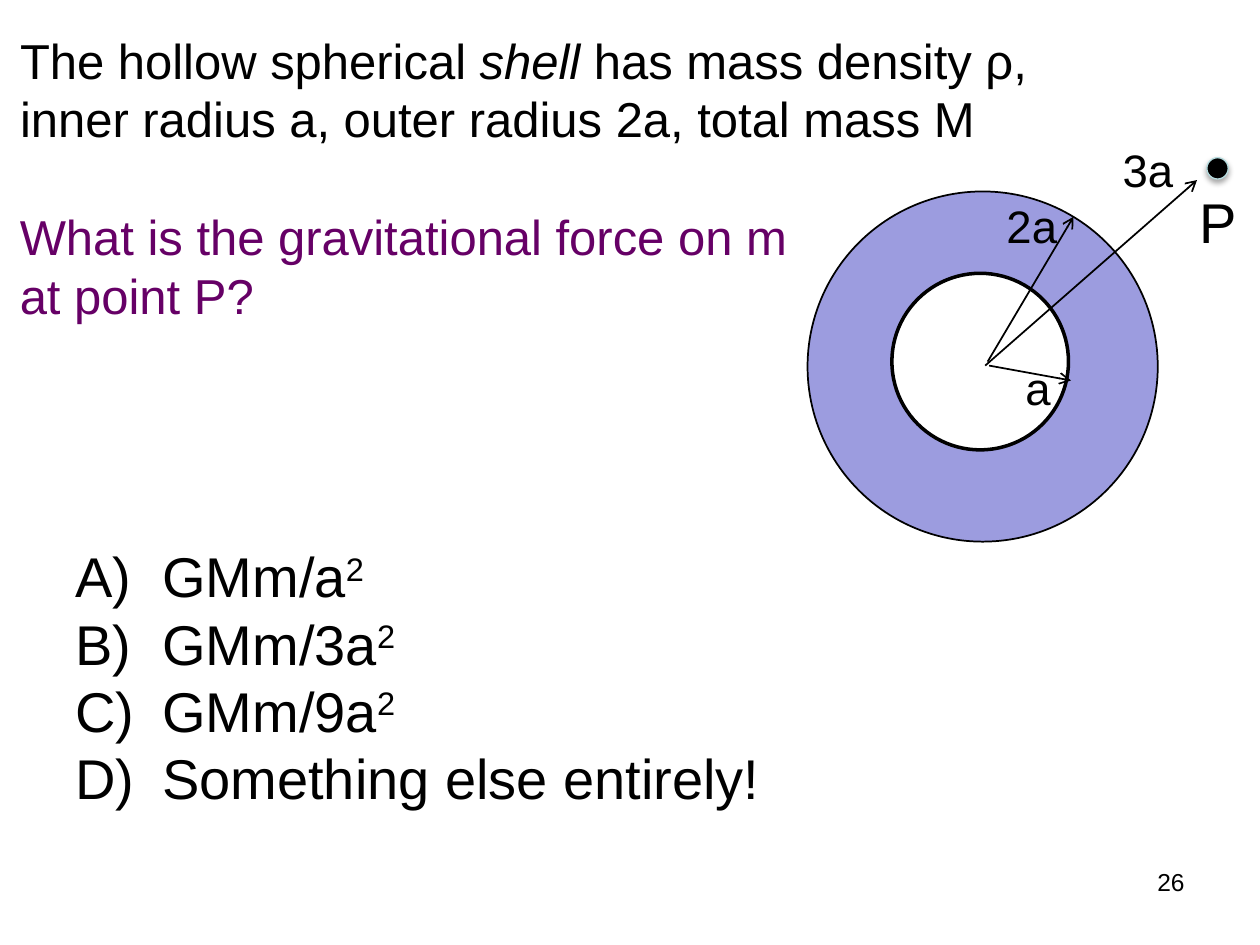
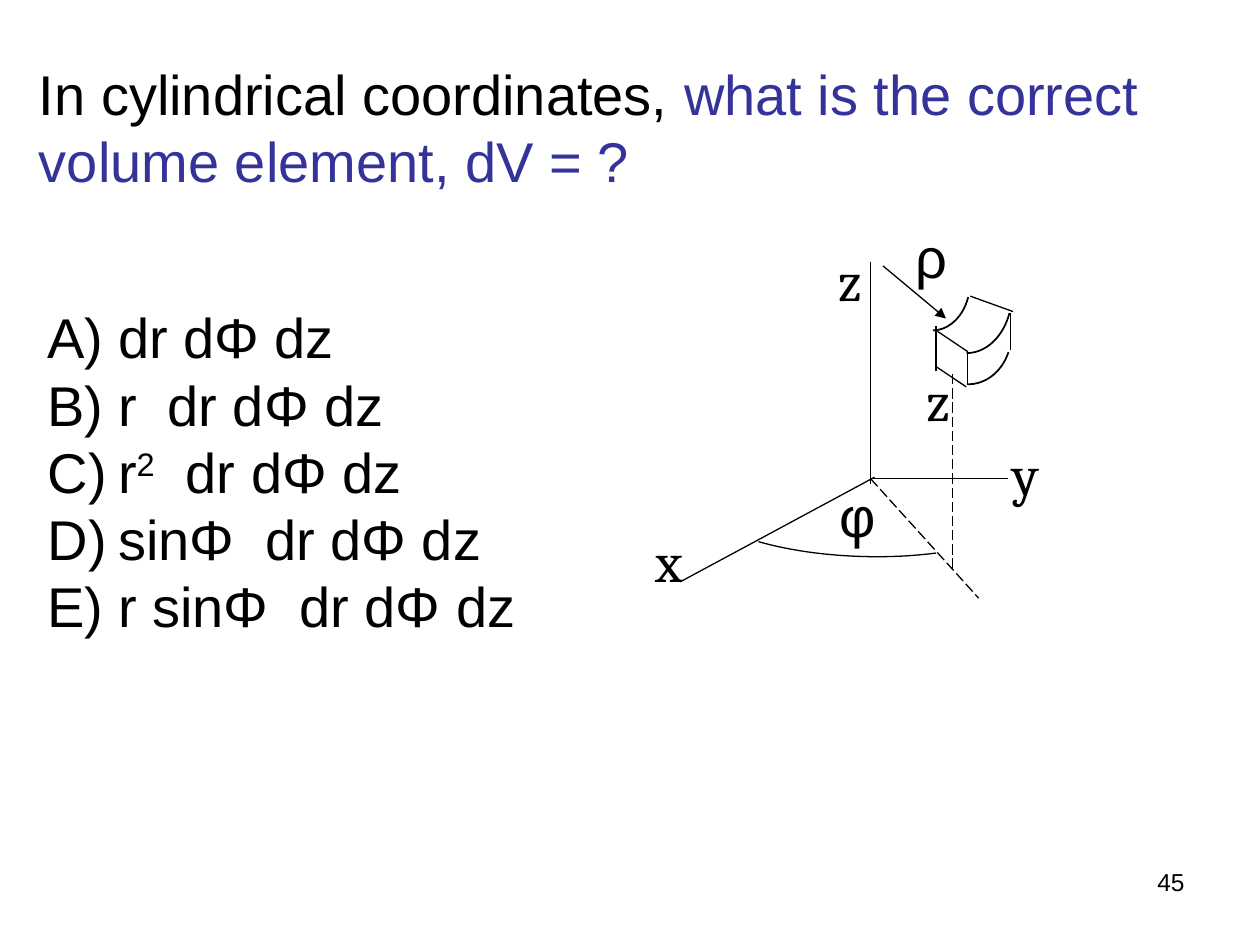
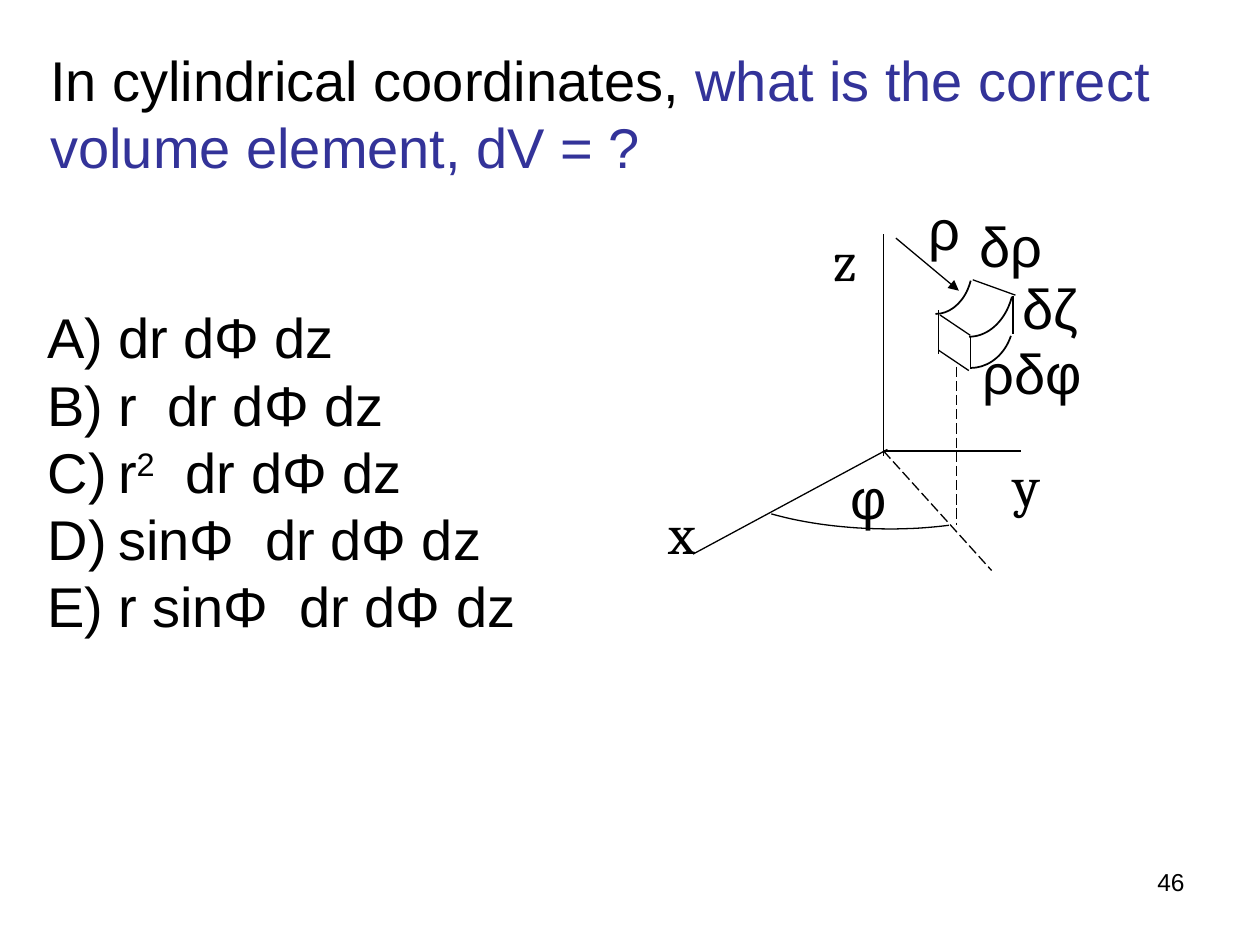
from lxml.etree import SubElement
from pptx import Presentation
from pptx.dml.color import RGBColor
from pptx.enum.dml import MSO_LINE
from pptx.enum.shapes import MSO_CONNECTOR, MSO_SHAPE
from pptx.enum.text import MSO_ANCHOR, MSO_AUTO_SIZE, PP_ALIGN
from pptx.oxml.ns import qn
from pptx.util import Cm, Pt

BLACK, WHITE = "000000", "FFFFFF"
PURPLE, BLUE, LAVENDER, PALE_TEAL = "660066", "333399", "9C9CDF", "B6DCDF"
SANS, SERIF = "Arial", "Cambria"
SUPERSCRIPT = {"baseline": "30000"}
ITALIC = {"i": "1"}


def rgb(color):
    return RGBColor.from_string(color)


class Deck:
    """Holds the shared style and the slide being drawn; lengths are in cm."""

    def __init__(self):
        self.presentation = Presentation()
        self.presentation.slide_width = Cm(25.4)
        self.presentation.slide_height = Cm(19.05)
        self.slide = None

    def new_slide(self, number, title, box, size=32):
        layout = self.presentation.slide_layouts[5]
        self.slide = self.presentation.slides.add_slide(layout)
        heading = self.slide.shapes.title
        heading.left, heading.top, heading.width, heading.height = map(Cm, box)
        heading.text_frame.vertical_anchor = MSO_ANCHOR.TOP
        heading.text_frame.auto_size = MSO_AUTO_SIZE.NONE
        self.fill_frame(heading.text_frame, title, size)
        self.text([str(number)], (18.21, 17.35, 5.92, 1.32), 14, align=PP_ALIGN.RIGHT)

    def fill_frame(self, frame, lines, size, font=SANS, color=BLACK, align=PP_ALIGN.LEFT):
        """Each line is a string or a list of (text, attributes, color) runs."""
        for index, line in enumerate(lines):
            paragraph = frame.paragraphs[0] if index == 0 else frame.add_paragraph()
            paragraph.alignment = align
            paragraph.font.size = Pt(size)
            paragraph.font.name = font
            paragraph.font.color.rgb = rgb(color)
            runs = [(line, {}, None)] if isinstance(line, str) else line
            for words, attributes, run_color in runs:
                run = paragraph.add_run()
                run.text = words
                for key, value in attributes.items():
                    run.font._element.set(key, value)
                if run_color:
                    run.font.color.rgb = rgb(run_color)

    def text(self, lines, box, size, wrap=True, inset=True, **style):
        frame = self.slide.shapes.add_textbox(*map(Cm, box)).text_frame
        frame.word_wrap = wrap
        if not inset:
            frame.margin_left = frame.margin_right = Cm(0)
            frame.margin_top = frame.margin_bottom = Cm(0)
        self.fill_frame(frame, lines, size, **style)
        return frame

    def label(self, words, x, y, width=0.74, font=SANS):
        self.text([words], (x, y, width, 1.17), 32, inset=False, font=font)

    def answers(self, lines, box, hanging):
        """Lettered list with a hanging indent."""
        for paragraph in self.text(lines, box, 32).paragraphs:
            properties = paragraph._p.get_or_add_pPr()
            properties.set("marL", str(Cm(hanging)))
            properties.set("indent", str(-Cm(hanging)))
            letter = SubElement(properties, qn("a:buAutoNum"), type="alphaUcParenR")
            properties.insert(0, letter)

    def line(self, start, end, width=0.75, arrow=None, dashed=False):
        connector = self.slide.shapes.add_connector(
            MSO_CONNECTOR.STRAIGHT, *map(Cm, (*start, *end)))
        connector.line.color.rgb = rgb(BLACK)
        connector.line.width = Pt(width)
        if dashed:
            connector.line.dash_style = MSO_LINE.LONG_DASH
        if arrow:
            SubElement(connector.line._get_or_add_ln(), qn("a:tailEnd"), type=arrow)
        SubElement(connector._element.spPr, qn("a:effectLst"))

    def outline(self, shape, width, color=BLACK, fill=None):
        shape.shadow.inherit = False
        if fill:
            shape.fill.solid()
            shape.fill.fore_color.rgb = rgb(fill)
        else:
            shape.fill.background()
        shape.line.color.rgb = rgb(color)
        shape.line.width = Pt(width)
        return shape

    def circle(self, x, y, diameter, fill, width, color=BLACK):
        shape = self.slide.shapes.add_shape(
            MSO_SHAPE.OVAL, *map(Cm, (x, y, diameter, diameter)))
        return self.outline(shape, width, color, fill)

    def arc(self, *box):
        """Lower right part of an ellipse, from 24.2 to 90 degrees."""
        shape = self.slide.shapes.add_shape(MSO_SHAPE.ARC, *map(Cm, box))
        shape.adjustments[0], shape.adjustments[1] = 14.52, 54
        self.outline(shape, 1)

    def curve(self, points, steps=24):
        """Cubic curve through the first and last of four points."""
        def at(t):
            weights = ((1 - t) ** 3, 3 * t * (1 - t) ** 2, 3 * t * t * (1 - t), t ** 3)
            return tuple(Cm(sum(w * p[axis] for w, p in zip(weights, points)))
                         for axis in (0, 1))

        builder = self.slide.shapes.build_freeform(*at(0))
        builder.add_line_segments([at(i / steps) for i in range(1, steps + 1)], close=False)
        self.outline(builder.convert_to_shape(), 0.75)

    def soft_shadow(self, shape):
        effects = shape._element.spPr.find(qn("a:effectLst"))
        shadow = SubElement(effects, qn("a:outerShdw"), blurRad="40000", dist="23000",
                            dir="5400000", rotWithShape="0")
        tint = SubElement(shadow, qn("a:srgbClr"), val=BLACK)
        SubElement(tint, qn("a:alpha"), val="35000")


def shell_slide(deck):
    title = [
        [("The hollow spherical ", {}, None), ("shell", ITALIC, None),
         (" has mass density ρ,", {}, None)],
        "inner radius a, outer radius 2a, total mass M",
    ]
    deck.new_slide(26, title, (0.15, 0.48, 22.68, 2.7), size=28)
    deck.text(["What is the gravitational force on m", "at point P?"],
              (0.15, 4.04, 17, 2.6), 28, color=PURPLE)
    options = [[(f"GMm/{radius}", {}, None), ("2", SUPERSCRIPT, None)]
               for radius in ("a", "3a", "9a")]
    deck.answers(options + ["Something else entirely!"], (1.27, 10.8, 23.34, 6.93), 1.75)

    # Shell and its cavity
    deck.circle(16.28, 3.86, 7.06, LAVENDER, 1)
    deck.circle(17.98, 5.51, 3.56, WHITE, 2)

    # Radii and point P
    for start, end in (((19.91, 7.29), (21.64, 4.37)),
                       ((19.94, 7.37), (21.59, 7.67)),
                       ((19.86, 7.37), (24.13, 3.63))):
        deck.line(start, end, 1, arrow="arrow")
    for radius, x, y, width in (("a", 20.42, 7.14, 1.02), ("2a", 20.04, 3.86, 1.55),
                                ("3a", 22.38, 2.74, 1.55)):
        deck.text([radius], (x, y, width, 1.37), 26, wrap=False)
    deck.soft_shadow(deck.circle(24.33, 3.18, 0.43, BLACK, 0.75, PALE_TEAL))
    deck.text(["P"], (23.93, 3.66, 1.24, 1.63), 32, wrap=False)


def draw_axes(deck, x, y):
    """Coordinate axes with the origin at (x, y)."""
    deck.line((x, y - 4.37), (x, y + 0.1))
    deck.line((x, y), (x + 2.77, y))
    deck.line((x - 3.84, y + 2.08), (x + 0.08, y - 0.03))
    deck.line((x + 0.25, y - 4.29), (x + 1.52, y - 3.23), arrow="triangle")
    deck.line((x, y), (x + 2.18, y + 2.41), dashed=True)
    angle = ((-2.26, 1.27), (-1.22, 1.57), (0.18, 1.65), (1.32, 1.5))
    deck.curve([(x + dx, y + dy) for dx, dy in angle])
    deck.label("x", x - 4.34, y + 0.97, font=SERIF)
    deck.label("ρ", x + 0.91, y - 5.16, 1.85)


def draw_volume_element(deck, x, y):
    """Curved block whose upper left edge starts at (x, y)."""
    for dx, dy, width, height in ((-0.3, -1.85, 1.83, 2.39), (-0.23, -0.86, 1.75, 2.03),
                                  (-0.81, -1.9, 1.5, 1.98)):
        deck.arc(x + dx, y + dy, width, height)
    for x1, y1, x2, y2 in ((1.5, -0.28, 1.5, 0.48), (0.64, 0.53, 0.64, 1.19),
                           (0.69, -0.61, 1.55, -0.3), (0.03, 0.1, 0.64, 0.51),
                           (0, 0, 0, 0.89), (0, 0.81, 0.61, 1.22)):
        deck.line((x + x1, y + y1), (x + x2, y + y2))


def cylinder_slide(deck, number, title_box, origin, element, height_line, labels):
    title = [[("In cylindrical coordinates, ", {}, None),
              ("what is the correct volume element, dV = ?", {}, BLUE)]]
    deck.new_slide(number, title, title_box)
    options = [
        "dr dΦ dz",
        "r  dr dΦ dz",
        [("r", {}, None), ("2", SUPERSCRIPT, None), ("  dr dΦ dz", {}, None)],
        "sinΦ  dr dΦ dz",
        "r sinΦ  dr dΦ dz",
    ]
    deck.answers(options, (0.71, 5.98, 15.09, 7.9), 1.42)
    draw_axes(deck, *origin)
    draw_volume_element(deck, *element)
    deck.line(*height_line, dashed=True)
    for words, x, y in labels:
        latin = words in "yz"
        deck.label(words, x, y, 0.74 if latin else 2.6, SERIF if latin else SANS)


def main():
    deck = Deck()
    shell_slide(deck)
    cylinder_slide(
        deck, 45, (0.53, 1.07, 24.69, 3), (17.55, 9.65), (18.87, 6.58),
        ((19.2, 7.54), (19.2, 11.53)),
        (("y", 20.4, 8.86), ("z", 16.89, 4.95), ("φ", 16.92, 9.7), ("z", 18.67, 7.37)))
    cylinder_slide(
        deck, 46, (0.76, 0.79, 24.59, 3), (17.81, 9.09), (18.92, 6.25),
        ((19.28, 7.39), (19.28, 10.59)),
        (("y", 20.42, 9.09), ("z", 16.79, 4.55), ("φ", 17.15, 9.35),
         ("δρ", 19.74, 4.27), ("δζ", 20.62, 5.51), ("ρδφ", 19.81, 6.83)))
    deck.presentation.save("out.pptx")


if __name__ == "__main__":
    main()
